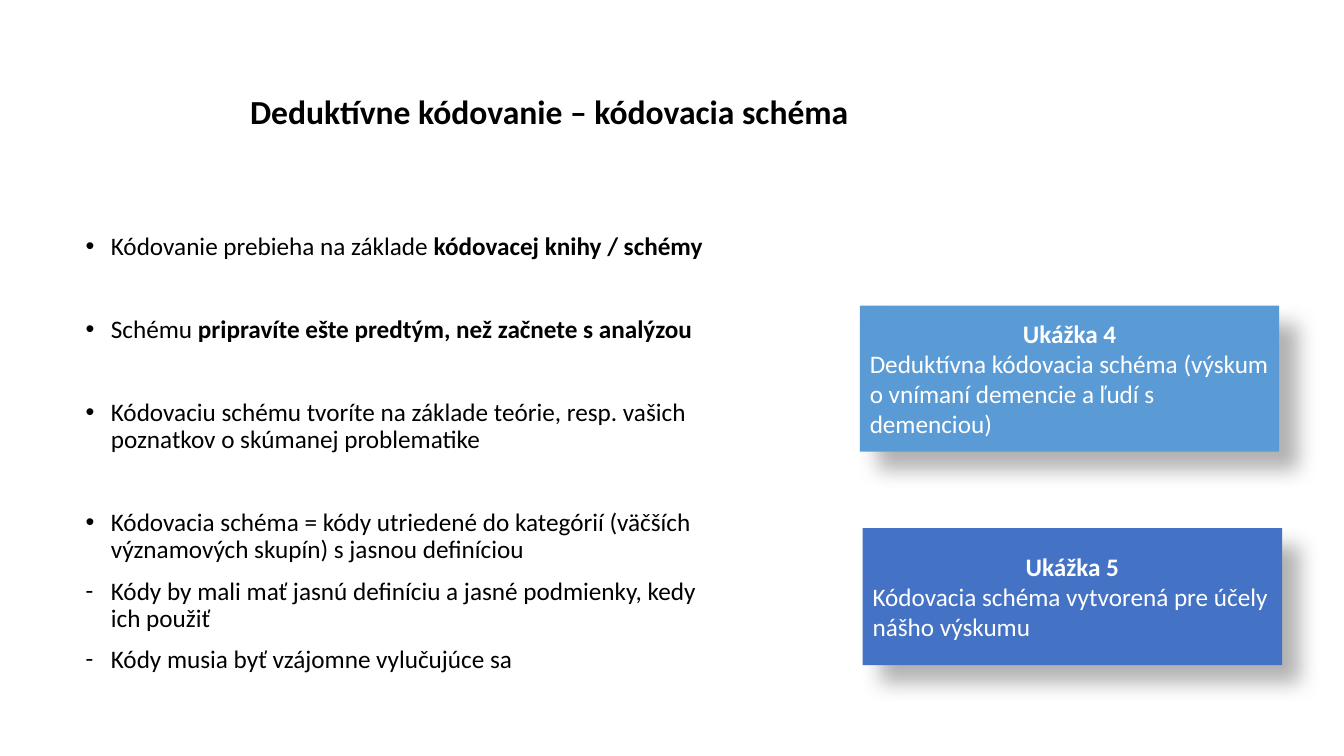
from lxml import etree
from pptx import Presentation, util as u
from pptx.dml.color import RGBColor
from pptx.enum import shapes, text
from pptx.oxml import ns

COLORS = {"ink": "000000", "paper": "FFFFFF", "sky": "5B9BD5", "royal": "4472C4"}
FRAME = {"word_wrap": True, "auto_size": text.MSO_AUTO_SIZE.NONE}
CENTER = {"alignment": text.PP_ALIGN.CENTER}
LEFT = {"alignment": text.PP_ALIGN.LEFT}
TIGHT = {"line_spacing": 0.9}
CLOSE, APART = u.Pt(10), u.Pt(39.8)

POINTS = [
    ("•", 0, [("Kódovanie prebieha na základe ", False), ("kódovacej knihy / schémy", True)]),
    ("•", APART, [("Schému", False), (" pripravíte ešte predtým, než začnete s analýzou", True)]),
    ("•", APART, [("Kódovaciu schému tvoríte na základe teórie, resp. vašich "
                   "poznatkov o skúmanej problematike", False)]),
    ("•", APART, [("Kódovacia schéma = kódy utriedené do kategórií (väčších "
                   "významových skupín) s jasnou definíciou", False)]),
    ("-", CLOSE, [("Kódy by mali mať jasnú definíciu a jasné podmienky, kedy ich použiť", False)]),
    ("-", CLOSE, [("Kódy musia byť vzájomne vylučujúce sa", False)]),
]
EXAMPLES = [
    ("Ukážka 4", "Deduktívna kódovacia schéma (výskum o vnímaní demencie a ľudí s demenciou)",
     "sky", (21.67, 7.7, 10.57, 3.68)),
    ("Ukážka 5", "Kódovacia schéma vytvorená pre účely nášho výskumu",
     "royal", (21.74, 13.31, 10.57, 3.45)),
]


def apply(target, values):
    for name, value in values.items():
        setattr(target, name, value)


def box_in_cm(box):
    return [u.Cm(length) for length in box]


def add_element(parent, tag, **attributes):
    return etree.SubElement(parent, ns.qn(tag), attributes)


def write(paragraph, pieces, color="ink", size=18, layout=None):
    apply(paragraph, layout or {})
    for words, bold in pieces:
        run = paragraph.add_run()
        run.text = words
        apply(run.font, {"name": "Calibri", "size": u.Pt(size), "bold": bold})
        run.font.color.rgb = RGBColor.from_string(COLORS[color])


def next_paragraph(frame, index):
    return frame.add_paragraph() if index else frame.paragraphs[0]


def add_frame(slide, box, anchor):
    frame = slide.shapes.add_textbox(*box_in_cm(box)).text_frame
    apply(frame, {**FRAME, "vertical_anchor": anchor})
    return frame


def add_title(slide, words, box):
    frame = add_frame(slide, box, text.MSO_ANCHOR.MIDDLE)
    write(frame.paragraphs[0], [(words, True)], size=24, layout={**CENTER, **TIGHT})


def add_points(slide, points, box):
    frame = add_frame(slide, box, text.MSO_ANCHOR.TOP)
    indent = u.Cm(0.635)
    for index, (mark, gap, pieces) in enumerate(points):
        point = next_paragraph(frame, index)
        properties = point._p.get_or_add_pPr()
        apply_indent = {"marL": indent, "indent": -indent}
        for name, value in apply_indent.items():
            properties.set(name, str(int(value)))
        add_element(properties, "a:buFont", typeface="Arial" if mark == "•" else "Calibri")
        add_element(properties, "a:buChar", char=mark)
        write(point, pieces, layout={**TIGHT, "space_before": gap})


def cast_shadow(card):
    card.shadow.inherit = False
    effects = card.element.spPr.find(ns.qn("a:effectLst"))
    shadow = add_element(effects, "a:outerShdw", blurRad=str(int(u.Pt(15))),
                         dist=str(int(u.Pt(18))), dir=str(45 * 60000),
                         algn="tl", rotWithShape="0")
    shade = add_element(shadow, "a:srgbClr", val=COLORS["ink"])
    add_element(shade, "a:alpha", val="30000")


def add_example(slide, heading, description, color, box):
    card = slide.shapes.add_shape(shapes.MSO_SHAPE.RECTANGLE, *box_in_cm(box))
    card.fill.solid()
    card.fill.fore_color.rgb = RGBColor.from_string(COLORS[color])
    card.line.fill.background()
    cast_shadow(card)
    frame = card.text_frame
    apply(frame, {**FRAME, "vertical_anchor": text.MSO_ANCHOR.MIDDLE})
    lines = [(heading, True, CENTER), (description, False, LEFT)]
    for index, (words, bold, layout) in enumerate(lines):
        write(next_paragraph(frame, index), [(words, bold)], "paper", layout=layout)


def main():
    deck = Presentation()
    apply(deck, {"slide_width": u.Cm(33.87), "slide_height": u.Cm(19.05)})
    slide = deck.slides.add_slide(deck.slide_layouts[6])
    add_title(slide, "Deduktívne kódovanie – kódovacia schéma", (2.34, 1.02, 23.01, 3.68))
    add_points(slide, POINTS, (1.91, 5.77, 16.66, 12.27))
    for example in EXAMPLES:
        add_example(slide, *example)
    deck.save("out.pptx")


if __name__ == "__main__":
    main()
